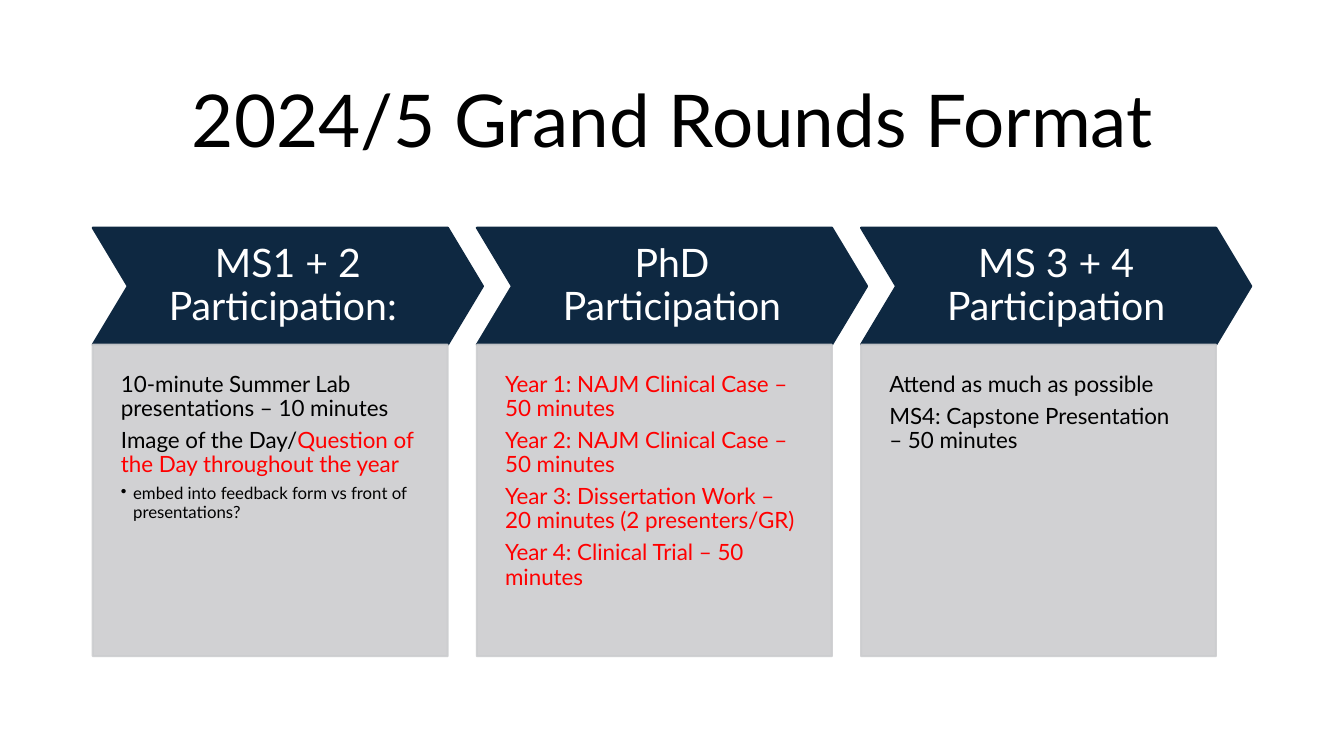
from pptx import Presentation
from pptx.util import Inches, Pt
from pptx.dml.color import RGBColor
from pptx.enum.shapes import MSO_SHAPE as Shape
from pptx.enum.text import PP_ALIGN as Align, MSO_ANCHOR as Anchor
from pptx.oxml.ns import qn
from lxml.etree import SubElement

NAVY, GREY, BLACK, WHITE, RED = "0E2841", "CCCDCF", "000000", "FFFFFF", "FF0000"

# Each column: heading, then paragraphs as (level, runs), a run being (text, colour)
COLUMNS = [
    ("MS1 + 2 Participation: ", [
        (0, [("10-minute Summer Lab presentations – 10 minutes", BLACK)]),
        (0, [("Image of the Day/", BLACK),
             ("Question of the Day throughout the year", RED)]),
        (1, [("embed into feedback form vs front of presentations?", BLACK)]),
    ]),
    ("PhD Participation", [
        (0, [("Year 1: NAJM Clinical Case – 50 minutes", RED)]),
        (0, [("Year 2: NAJM Clinical Case – 50 minutes", RED)]),
        (0, [("Year 3: Dissertation Work – 20 minutes (2 presenters/GR)", RED)]),
        (0, [("Year 4: Clinical Trial – 50 minutes", RED)]),
    ]),
    ("MS 3 + 4 Participation", [
        (0, [("Attend as much as possible", BLACK)]),
        (0, [("MS4: Capstone Presentation – 50 minutes", BLACK)]),
    ]),
]


def color(code):
    return RGBColor.from_string(code)


def fade(fill, share):
    """Set the opacity of a solid fill element, in percent."""
    SubElement(fill[0], qn("a:alpha")).set("val", str(share * 1000))


class Deck:
    font = "Lato"
    left, pitch = 0.92, 3.81
    top, mid, end = 2.26, 3.42, 6.51

    def __init__(self):
        self.prs = Presentation()
        self.prs.slide_width, self.prs.slide_height = Inches(13.33), Inches(7.5)
        self.slide = self.prs.slides.add_slide(self.prs.slide_layouts[6])

    def frame(self, shape, anchor, insets):
        frame = shape.text_frame
        frame.word_wrap = True
        frame.vertical_anchor = anchor
        (frame.margin_left, frame.margin_top,
         frame.margin_right, frame.margin_bottom) = map(Inches, insets)
        return frame

    def label(self, para, runs, size, align=Align.LEFT, after=0):
        para.alignment = align
        para.line_spacing = 0.9
        para.space_after = Pt(after)
        for text, code in runs:
            run = para.add_run()
            run.text = text
            run.font.name, run.font.size = self.font, Pt(size)
            run.font.color.rgb = color(code)

    def bullet(self, para):
        props = para._p.get_or_add_pPr()
        props.set("marL", str(Inches(0.12)))
        props.set("indent", str(-Inches(0.12)))
        SubElement(props, qn("a:buChar")).set("char", "•")

    def title(self, text):
        box = self.slide.shapes.add_textbox(
            Inches(self.left), Inches(0.61), Inches(11.5), Inches(1.24))
        frame = self.frame(box, Anchor.MIDDLE, (0.1, 0.05, 0.1, 0.05))
        self.label(frame.paragraphs[0], [(text, BLACK)], 52, Align.CENTER)

    def block(self, kind, col, top, width, end, code):
        shape = self.slide.shapes.add_shape(
            kind, Inches(self.left + col * self.pitch), Inches(top),
            Inches(width), Inches(end - top))
        shape.shadow.inherit = False
        shape.fill.solid()
        shape.fill.fore_color.rgb = shape.line.color.rgb = color(code)
        shape.line.width = Pt(1.5)
        return shape

    def head(self, col, text):
        arrow = self.block(Shape.CHEVRON, col, self.top, 3.87, self.mid, NAVY)
        arrow.adjustments[0] = 0.3
        frame = self.frame(arrow, Anchor.MIDDLE, [0.14] * 4)
        self.label(frame.paragraphs[0], [(text, WHITE)], 28, Align.CENTER)

    def body(self, col, items):
        card = self.block(Shape.RECTANGLE, col, self.mid, 3.52, self.end, GREY)
        props = card._element.spPr
        for fill in (props.find(qn("a:solidFill")),
                     props.find(qn("a:ln")).find(qn("a:solidFill"))):
            fade(fill, 90)
        frame = self.frame(card, Anchor.TOP, (0.28, 0.28, 0.28, 0.56))
        for i, (level, runs) in enumerate(items):
            para = frame.add_paragraph() if i else frame.paragraphs[0]
            para.level = level
            size, after = (12, 1.8) if level else (16, 5.6)
            self.label(para, runs, size, after=after)
            if level:
                self.bullet(para)


def main():
    deck = Deck()
    deck.title("2024/5 Grand Rounds Format")
    for col, (text, items) in enumerate(COLUMNS):
        deck.head(col, text)
        deck.body(col, items)
    deck.prs.save("out.pptx")


if __name__ == "__main__":
    main()
